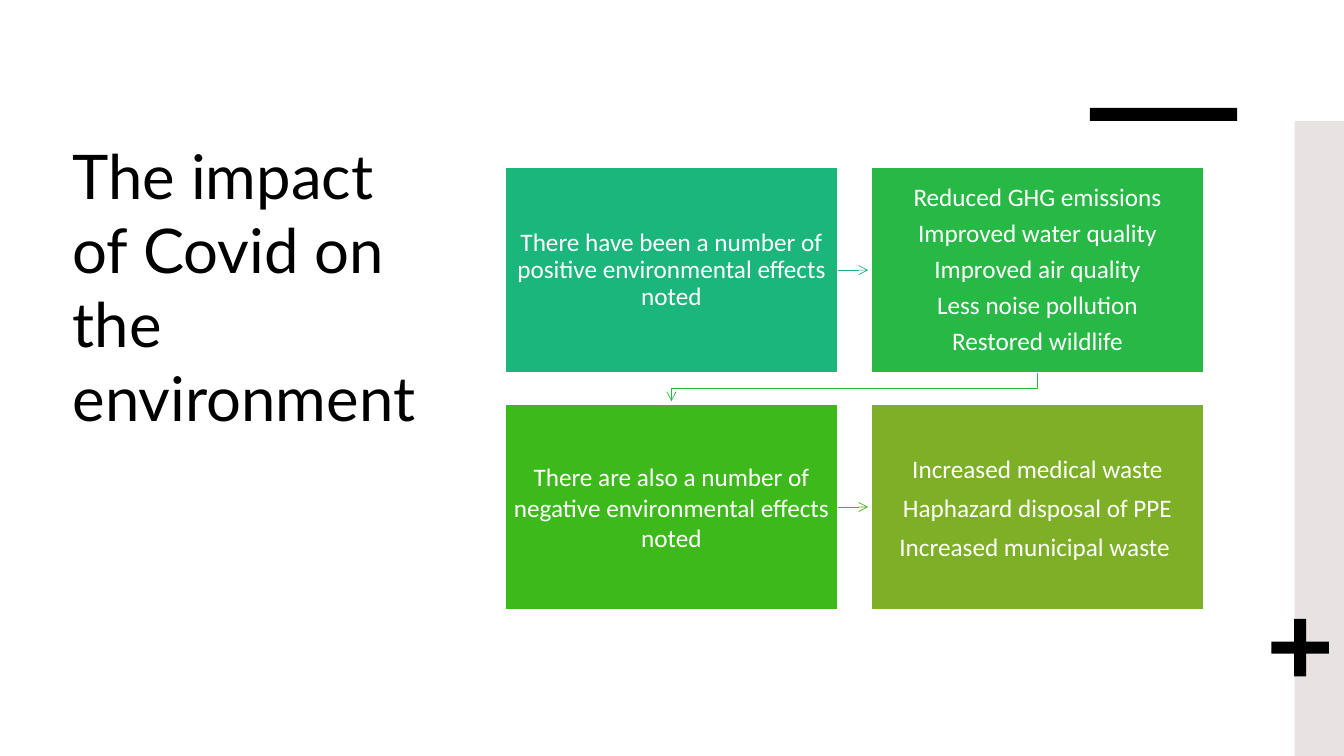
from pptx import Presentation
from pptx.dml.color import RGBColor
from pptx.enum.shapes import MSO_CONNECTOR, MSO_SHAPE
from pptx.enum.text import MSO_ANCHOR, MSO_AUTO_SIZE, PP_ALIGN
from pptx.oxml.ns import qn
from pptx.util import Inches, Pt
from lxml import etree

RECT, PLUS = MSO_SHAPE.RECTANGLE, MSO_SHAPE.CROSS
STRAIGHT = MSO_CONNECTOR.STRAIGHT
TOP, MIDDLE = MSO_ANCHOR.TOP, MSO_ANCHOR.MIDDLE
LEFT, CENTER = PP_ALIGN.LEFT, PP_ALIGN.CENTER
FIXED = MSO_AUTO_SIZE.NONE

COLORS = {
    "black": "000000", "white": "FFFFFF", "band": "E8E2E2",
    "teal": "1BB67B", "green": "28B845", "lime": "3EB91C", "olive": "7DB026",
}

# Grid of boxes, in inches
GRID_X, GRID_Y = 5.01, 1.66
BOX_W, BOX_H = 3.3, 2.04
STEP_X, STEP_Y = 3.63, 2.35
GAP = 0.03  # space between an arrow tip and its box

# Column, row, colour, line spacing, lines
BOXES = [
    (0, 0, "teal", 0.9,
     ["There have been a number of positive environmental effects noted"]),
    (1, 0, "green", 0.9,
     ["Reduced GHG emissions", "Improved water quality",
      "Improved air quality", "Less noise pollution", "Restored wildlife"]),
    (0, 1, "lime", 1.0,
     ["There are also a number of negative environmental effects noted"]),
    (1, 1, "olive", 1.0,
     ["Increased medical waste", "Haphazard disposal of PPE",
      "Increased municipal waste "]),
]


def rgb(name):
    return RGBColor.from_string(COLORS[name])


def add_block(slide, kind, color, *place):
    block = slide.shapes.add_shape(kind, *map(Inches, place))
    block.shadow.inherit = False
    block.fill.solid()
    block.fill.fore_color.rgb = rgb(color)
    block.line.fill.background()
    return block


def add_title(slide, text):
    title = slide.shapes.title
    title.left, title.top = Inches(0.62), Inches(1.32)
    title.width, title.height = Inches(3.62), Inches(4.4)
    frame = title.text_frame
    frame.text = text
    frame.word_wrap = True
    frame.auto_size = FIXED
    frame.vertical_anchor = TOP
    para = frame.paragraphs[0]
    para.alignment = LEFT
    para.font.name, para.font.size = "Lato", Pt(44)
    para.font.color.rgb = rgb("black")


def add_box(slide, col, row, color, spacing, lines):
    box = add_block(slide, RECT, color, GRID_X + col * STEP_X,
                    GRID_Y + row * STEP_Y, BOX_W, BOX_H)
    box.line.color.rgb = rgb("white")
    box.line.width = Pt(1)
    frame = box.text_frame
    frame.word_wrap = True
    frame.vertical_anchor = MIDDLE
    frame.margin_left = frame.margin_right = Inches(0.07)
    frame.margin_top = frame.margin_bottom = Inches(0.07)
    frame.text = "\n".join(lines)
    for para in frame.paragraphs:
        para.alignment = CENTER
        para.line_spacing = spacing
        para.space_after = Pt(6.3)
        para.font.name, para.font.size = "Calibri", Pt(18)
        para.font.color.rgb = rgb("white")
    return box


def style_arrow(arrow, color):
    arrow.line.color.rgb = rgb(color)
    arrow.line.width = Pt(0.5)
    props = arrow.element.spPr
    etree.SubElement(props.find(qn("a:ln")), qn("a:tailEnd"), type="arrow")
    if props.find(qn("a:effectLst")) is None:
        etree.SubElement(props, qn("a:effectLst"))


def add_arrow(slide, start, end, color):
    y = start.top + start.height // 2
    arrow = slide.shapes.add_connector(
        STRAIGHT, start.left + start.width, y, end.left - Inches(GAP), y)
    arrow.begin_connect(start, 3)
    style_arrow(arrow, color)


def add_bend(slide, start, end, color):
    x1 = start.left + start.width // 2
    x2 = end.left + end.width // 2
    y1, y2 = start.top + start.height, end.top - Inches(GAP)
    mid = (y1 + end.top) // 2
    path = slide.shapes.build_freeform(x1, y1)
    path.add_line_segments([(x1, mid), (x2, mid), (x2, y2)], close=False)
    bend = path.convert_to_shape()
    bend.fill.background()
    style_arrow(bend, color)


def main():
    deck = Presentation()
    deck.slide_width, deck.slide_height = Inches(13.33), Inches(7.5)
    slide = deck.slides.add_slide(deck.slide_layouts[5])

    # Title and side decoration
    add_title(slide, "The impact of Covid on the environment")
    add_block(slide, RECT, "band", 12.84, 1.2, 0.49, 6.3)
    add_block(slide, RECT, "black", 10.81, 1.07, 1.46, 0.13)
    plus = add_block(slide, PLUS, "black", 12.61, 6.14, 0.57, 0.57)
    plus.adjustments[0] = 0.395

    # Boxes and the arrows between them
    good, gains, bad, harms = [add_box(slide, *box) for box in BOXES]
    add_arrow(slide, good, gains, "teal")
    add_bend(slide, gains, bad, "green")
    add_arrow(slide, bad, harms, "lime")

    deck.save("out.pptx")


if __name__ == "__main__":
    main()
